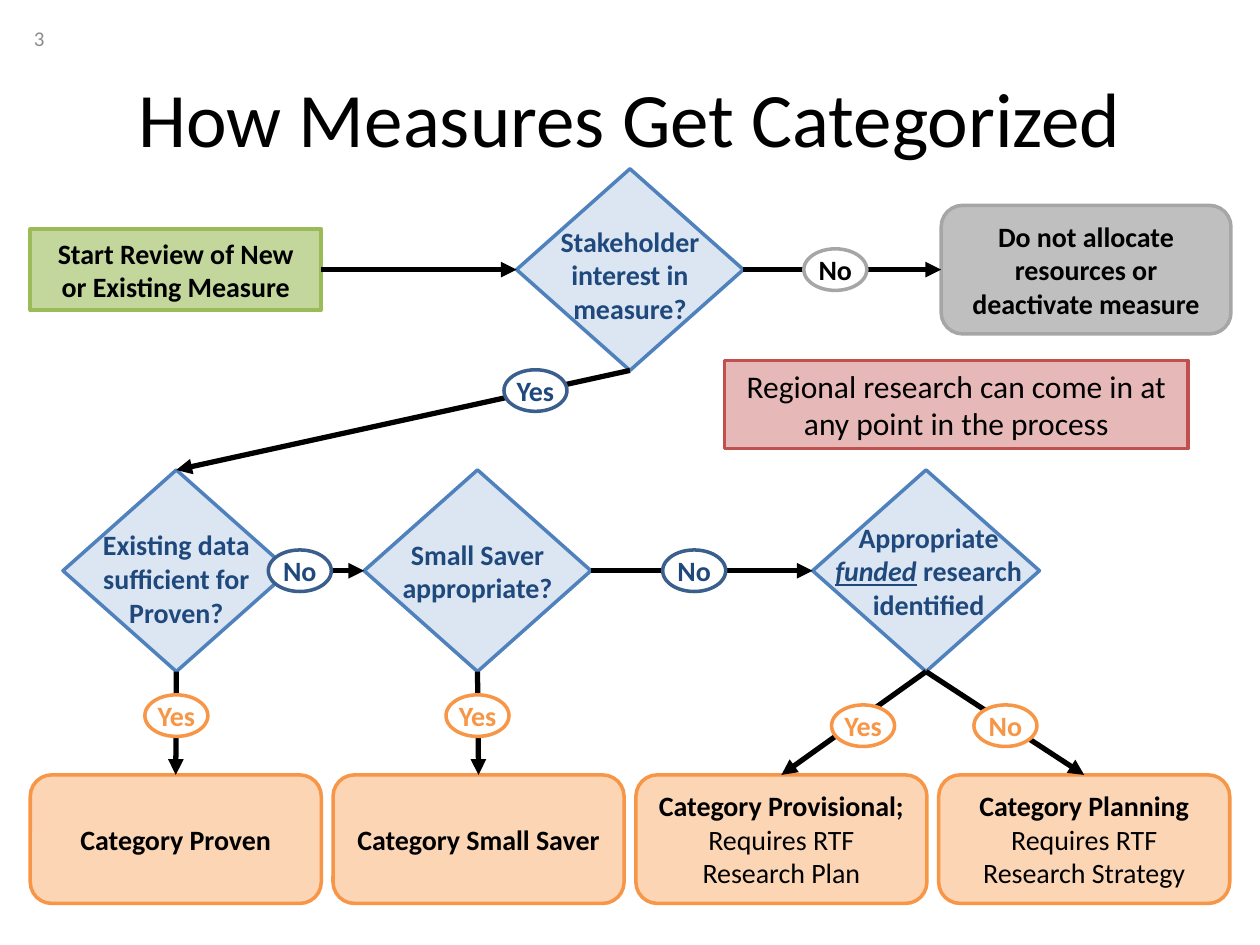
from dataclasses import dataclass

from lxml.etree import SubElement
from pptx import Presentation
from pptx.dml.color import RGBColor
from pptx.enum.shapes import MSO_CONNECTOR, MSO_SHAPE
from pptx.enum.text import MSO_ANCHOR, PP_ALIGN
from pptx.oxml.ns import qn
from pptx.util import Inches, Pt


@dataclass(frozen=True)
class Theme:
    font: str = "Calibri"
    title: int = 44
    note: int = 18
    body: int = 16
    number: int = 12
    black: str = "000000"
    white: str = "FFFFFF"
    number_gray: str = "8C8C8C"
    navy: str = "1F497D"
    badge_blue: str = "3A5F8C"
    orange: str = "F79646"
    gray: str = "A6A6A6"
    question: tuple = ("DCE6F2", "4F81BD")
    category: tuple = ("FCD5B5", "F79646")
    start: tuple = ("C3D69B", "9BBB59")
    stop: tuple = ("BFBFBF", "A6A6A6")
    research: tuple = ("E6B9B8", "C0504D")


T = Theme()
W, H = 10, 7.5
MARGIN, BOX_W, BOX_H = 0.24, 2.31, 1.02
PITCH = (W - 2 * MARGIN - BOX_W) / 3
TOP_AXIS, QUESTION_AXIS, CATEGORY_TOP = 2.14, 4.53, 6.15
QUESTION_W, QUESTION_H = 1.8, 1.6
BADGE_W, BADGE_H = 0.5, 0.33
TOP, LEFT, BOTTOM, RIGHT = range(4)  # connection sites


def column(i):
    return MARGIN + i * PITCH


def rgb(value):
    return RGBColor.from_string(value)


def write(sp, paragraphs, size=T.body, color=T.black, bold=True,
          align=PP_ALIGN.CENTER, anchor=MSO_ANCHOR.MIDDLE, wrap=True):
    """Fill a shape; each paragraph is a list of (text, font overrides)."""
    tf = sp.text_frame
    tf.word_wrap, tf.vertical_anchor = wrap, anchor
    if isinstance(paragraphs, str):
        paragraphs = [[(paragraphs, {})]]
    for i, runs in enumerate(paragraphs):
        p = tf.add_paragraph() if i else tf.paragraphs[0]
        p.alignment = align
        for text, overrides in runs:
            for j, line in enumerate(text.split("\n")):
                if j:
                    p.add_line_break()
                r = p.add_run()
                r.text = line
                r.font.name, r.font.size, r.font.bold = T.font, Pt(size), bold
                r.font.color.rgb = rgb(color)
                for name, value in overrides.items():
                    setattr(r.font, name, value)


def add_text(s, box, text, **fmt):
    sp = s.shapes.add_textbox(*map(Inches, box))
    write(sp, text, **fmt)
    return sp


def add_box(s, kind, box, colors, text=None, width=2, **fmt):
    sp = s.shapes.add_shape(kind, *map(Inches, box))
    sp.shadow.inherit = False
    fill, line = colors
    sp.fill.solid()
    sp.fill.fore_color.rgb = rgb(fill)
    sp.line.color.rgb = rgb(line)
    sp.line.width = Pt(width)
    if text:
        write(sp, text, **fmt)
    return sp


def add_question(s, cx, cy, text, label_w=1.5, label_dx=0, label_dy=0.04):
    """Diamond centred on (cx, cy) with a label wider than its text area."""
    sp = add_box(s, MSO_SHAPE.FLOWCHART_DECISION,
                 (cx - QUESTION_W / 2, cy - QUESTION_H / 2, QUESTION_W, QUESTION_H), T.question)
    label_h = 0.91
    add_text(s, (cx - label_w / 2 + label_dx, cy - label_h / 2 + label_dy, label_w, label_h),
             text, color=T.navy)
    return sp


def add_category(s, i, text):
    return add_box(s, MSO_SHAPE.FLOWCHART_ALTERNATE_PROCESS,
                   (column(i), CATEGORY_TOP, BOX_W, BOX_H), T.category, text)


def add_arrow(s, start, start_site, end, end_site):
    c = s.shapes.add_connector(MSO_CONNECTOR.STRAIGHT, 0, 0, 0, 0)
    c.begin_connect(start, start_site)
    c.end_connect(end, end_site)
    c.line.color.rgb = rgb(T.black)
    c.line.width = Pt(3)
    SubElement(c.line._get_or_add_ln(), qn("a:tailEnd"), type="triangle")
    SubElement(c._element.spPr, qn("a:effectLst"))


def add_badge(s, cx, cy, text, line, color):
    sp = add_box(s, MSO_SHAPE.FLOWCHART_CONNECTOR,
                 (cx - BADGE_W / 2, cy - BADGE_H / 2, BADGE_W, BADGE_H), (T.white, line))
    tf = sp.text_frame
    tf.margin_left = tf.margin_right = tf.margin_top = tf.margin_bottom = 0
    write(sp, text, color=color, wrap=False)


def main():
    prs = Presentation()
    prs.slide_width, prs.slide_height = Inches(W), Inches(H)
    s = prs.slides.add_slide(prs.slide_layouts[6])

    add_text(s, (0.17, 0.1, 2.33, 0.4), "3", size=T.number, color=T.number_gray,
             bold=False, align=PP_ALIGN.LEFT)
    add_text(s, (0.5, 0.3, W - 1, 1.25), "How Measures Get Categorized",
             size=T.title, bold=False)

    start = add_box(s, MSO_SHAPE.RECTANGLE, (column(0), TOP_AXIS - 0.32, BOX_W, 0.64),
                    T.start, "Start Review of New or Existing Measure", width=2.25)
    stop = add_box(s, MSO_SHAPE.FLOWCHART_ALTERNATE_PROCESS,
                   (7.47, TOP_AXIS - BOX_H / 2, 2.3, BOX_H), T.stop,
                   "Do not allocate resources or deactivate measure")
    add_box(s, MSO_SHAPE.RECTANGLE, (5.75, 2.86, 3.68, 0.7), T.research,
            "Regional research can come in at any point in the process",
            size=T.note, bold=False)

    interest = add_question(s, W / 2, TOP_AXIS, "Stakeholder interest in measure?")
    data = add_question(s, 1.4, QUESTION_AXIS, "Existing data sufficient for Proven?",
                        label_w=1.67, label_dy=0.06)
    saver = add_question(s, 3.79, QUESTION_AXIS, "Small Saver appropriate?", label_dy=0)
    funded = add_question(s, 7.35, QUESTION_AXIS,
                          [[("Appropriate ", {}),
                            ("funded", {"italic": True, "underline": True}),
                            (" research identified", {})]], label_w=1.75, label_dx=0.02, label_dy=0)

    plain = {"bold": False}
    proven, small, provisional, planning = [
        add_category(s, i, text) for i, text in enumerate([
            "Category Proven",
            "Category Small Saver",
            [[("Category Provisional; ", {}), ("Requires RTF Research Plan", plain)]],
            [[("Category Planning", {})], [("Requires RTF\nResearch Strategy", plain)]],
        ])]

    for link in [
        (start, RIGHT, interest, LEFT),
        (interest, RIGHT, stop, LEFT),
        (interest, BOTTOM, data, TOP),
        (data, RIGHT, saver, LEFT),
        (saver, RIGHT, funded, LEFT),
        (data, BOTTOM, proven, TOP),
        (saver, BOTTOM, small, TOP),
        (funded, BOTTOM, provisional, TOP),
        (funded, BOTTOM, planning, TOP),
    ]:
        add_arrow(s, *link)

    blue, orange = (T.badge_blue, T.navy), (T.orange, T.orange)
    for cx, cy, text, colors in [
        (6.63, TOP_AXIS, "No", (T.gray, T.black)),
        (4.25, 3.1, "Yes", blue),
        (2.38, QUESTION_AXIS, "No", blue),
        (5.51, QUESTION_AXIS, "No", blue),
        (1.4, 5.68, "Yes", orange),
        (3.79, 5.68, "Yes", orange),
        (6.85, 5.76, "Yes", orange),
        (7.98, 5.76, "No", orange),
    ]:
        add_badge(s, cx, cy, text, *colors)

    prs.save("out.pptx")


if __name__ == "__main__":
    main()
